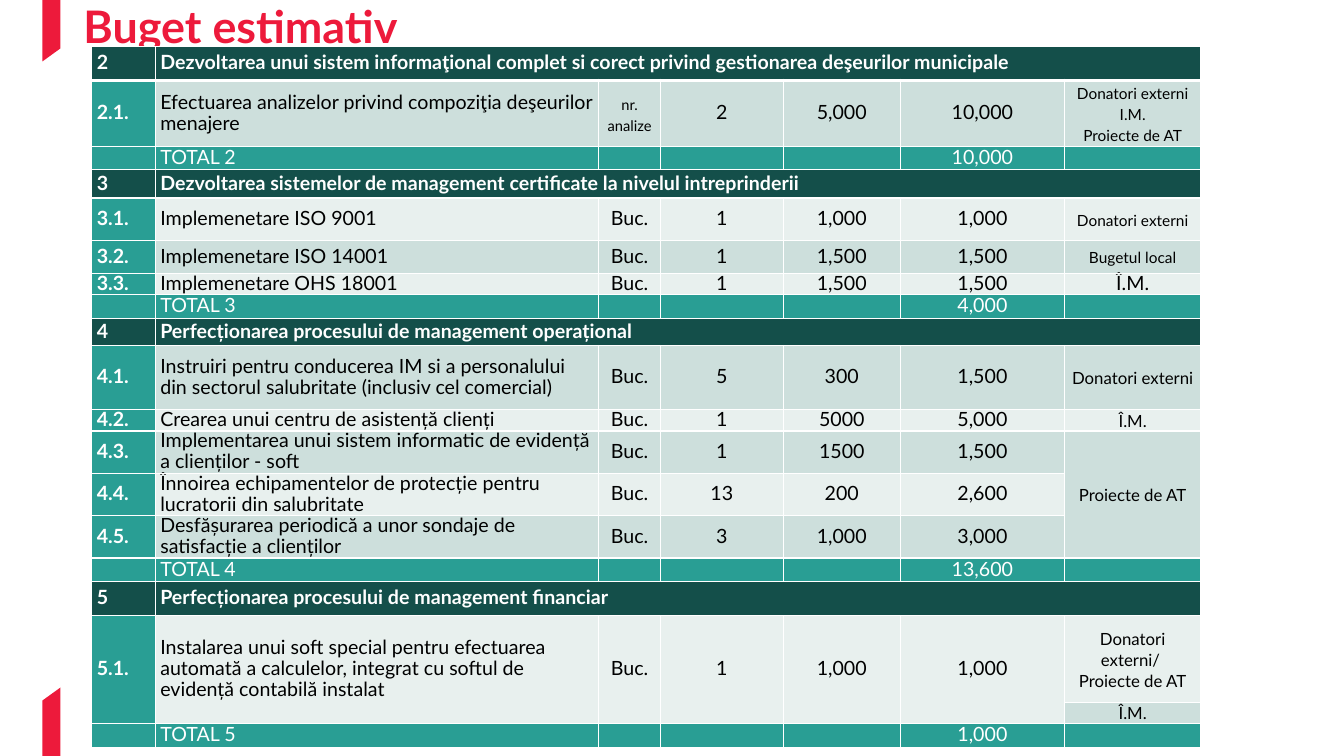
from lxml.etree import SubElement
from pptx import Presentation
from pptx.dml.color import RGBColor
from pptx.enum.text import MSO_ANCHOR as Anchor, PP_ALIGN as Align
from pptx.oxml.ns import qn
from pptx.util import Inches, Pt

FONT = "Lato"
RED, WHITE, BLACK = "ED1A3B", "FFFFFF", "000000"
DARK, TEAL, BANDS = "144F4A", "299E94", ("E8F0EE", "CDDFDC")

TITLE = "Buget estimativ"
RIBBONS = [
    [(0.42, 0), (0.6, 0), (0.6, 0.48), (0.42, 0.61)],
    [(0.42, 6.95), (0.6, 6.82), (0.6, 7.5), (0.42, 7.5)],
]
COLUMNS = [0.63, 4.4, 0.61, 1.22, 1.16, 1.63, 1.35]

# (height, "section", number, title), (height, "total", label, amount) or
# (height, "item", number, activity, unit, count, price, sum, funder, funder size)
ROWS = [
    (0.34, "section", "2", "Dezvoltarea unui sistem informaţional complet si corect privind "
                           "gestionarea deşeurilor municipale"),
    (0.65, "item", "2.1.", "Efectuarea analizelor privind compoziţia deşeurilor menajere",
     "nr. analize", "2", "5,000", "10,000", "Donatori externi\vI.M.\vProiecte de AT", 11),
    (0.23, "total", "TOTAL 2", "10,000"),
    (0.28, "section", "3", "Dezvoltarea sistemelor de management certificate la nivelul intreprinderii"),
    (0.42, "item", "3.1.", "Implemenetare ISO 9001", "Buc.", "1", "1,000", "1,000",
     "Donatori externi", 11),
    (0.33, "item", "3.2.", "Implemenetare ISO 14001", "Buc.", "1", "1,500", "1,500",
     "Bugetul local", 11),
    (0.21, "item", "3.3.", "Implemenetare OHS 18001", "Buc.", "1", "1,500", "1,500", "Î.M.", 14),
    (0.23, "total", "TOTAL 3", "4,000"),
    (0.27, "section", "4", "Perfecționarea procesului de management operațional"),
    (0.64, "item", "4.1.", "Instruiri pentru conducerea IM si a personalului din sectorul "
                           "salubritate (inclusiv cel comercial)",
     "Buc.", "5", "300", "1,500", "Donatori externi", 12),
    (0.21, "item", "4.2.", "Crearea unui centru de asistență clienți", "Buc.", "1", "5000",
     "5,000", "Î.M.", 12),
    (0.42, "item", "4.3.", "Implementarea unui sistem informatic de evidență a clienților - soft",
     "Buc.", "1", "1500", "1,500", "Proiecte de AT", 12),
    (0.42, "item", "4.4.", "Înnoirea echipamentelor de protecție pentru lucratorii din salubritate",
     "Buc.", "13", "200", "2,600", "", 12),
    (0.42, "item", "4.5.", "Desfășurarea periodică a unor sondaje de satisfacție a clienților",
     "Buc.", "3", "1,000", "3,000", "", 12),
    (0.23, "total", "TOTAL 4", "13,600"),
    (0.34, "section", "5", "Perfecționarea procesului de management financiar"),
    (0.86, "item", "5.1.", "Instalarea unui soft special pentru efectuarea automată a calculelor, "
                           "integrat cu softul de evidență contabilă instalat",
     "Buc.", "1", "1,000", "1,000", "Donatori externi/ \vProiecte de AT", 12),
    (0.21, "item", "", "", "", "", "", "", "Î.M.", 12),
    (0.23, "total", "TOTAL 5", "1,000"),
]
# (first row, first column, last row, last column)
MERGES = [(row, 1, row, 6) for row, entry in enumerate(ROWS) if entry[1] == "section"]
MERGES += [(11, 6, 13, 6)] + [(16, column, 17, column) for column in range(6)]


def rgb(code):
    return RGBColor.from_string(code)


def write(frame, text, size=14, color=BLACK, bold=False, align=Align.LEFT, spacing=Pt(15)):
    para = frame.paragraphs[0]
    para.text = text
    para.alignment = align
    para.line_spacing = spacing
    for span in para.runs:
        span.font.name = FONT
        span.font.size = Pt(size)
        span.font.bold = bold
        span.font.color.rgb = rgb(color)
    if not text:
        para.font.size = Pt(size)


def add_border(cell, side, width):
    line = SubElement(cell._tc.get_or_add_tcPr(), qn(f"a:ln{side}"), w=str(Pt(width)))
    SubElement(SubElement(line, qn("a:solidFill")), qn("a:srgbClr"), val=WHITE)


def add_ribbon(page, points):
    corners = [(Inches(x), Inches(y)) for x, y in points]
    builder = page.shapes.build_freeform(*corners[0])
    builder.add_line_segments(corners[1:], close=True)
    ribbon = builder.convert_to_shape()
    ribbon.shadow.inherit = False
    ribbon.fill.solid()
    ribbon.fill.fore_color.rgb = rgb(RED)
    ribbon.line.fill.background()


def row_texts(kind, values):
    """Return the seven cell texts of a row."""
    if kind == "section":
        return [*values] + [""] * 5
    if kind == "total":
        label, amount = values
        return ["", label, "", "", "", amount, ""]
    return values[:7]


def cell_style(kind, row, column, values):
    """Return the fill and the text format of a cell."""
    align = Align.LEFT if column < 2 else Align.CENTER
    if kind == "section":
        return DARK, dict(color=WHITE, bold=True, align=align)
    if kind == "total" or column == 0:
        return TEAL, dict(color=WHITE, bold=column == 0, align=align)
    size = 14
    if column == 6:
        size = values[7]
    elif column == 2 and values[2] != "Buc.":
        size = 10.5
    return BANDS[row % 2], dict(size=size, align=align)


def add_budget(page):
    height = sum(entry[0] for entry in ROWS)
    table = page.shapes.add_table(len(ROWS), len(COLUMNS), Inches(0.91), Inches(0.46),
                                  Inches(sum(COLUMNS)), Inches(height)).table
    table.first_row = table.horz_banding = False
    for column, width in enumerate(COLUMNS):
        table.columns[column].width = Inches(width)
    for row, (height, kind, *values) in enumerate(ROWS):
        table.rows[row].height = Inches(height)
        for column, text in enumerate(row_texts(kind, values)):
            cell = table.cell(row, column)
            fill, style = cell_style(kind, row, column, values)
            cell.margin_left = cell.margin_right = Inches(0.05)
            cell.margin_top = cell.margin_bottom = 0
            cell.vertical_anchor = Anchor.MIDDLE
            for side in "LRTB":
                under_header = (row, side) in ((0, "B"), (1, "T"))
                add_border(cell, side, 3 if under_header else 1)
            cell.fill.solid()
            cell.fill.fore_color.rgb = rgb(fill)
            write(cell.text_frame, text, **style)
    for top, left, bottom, right in MERGES:
        table.cell(top, left).merge(table.cell(bottom, right))


def main():
    deck = Presentation()
    deck.slide_width, deck.slide_height = Inches(13.33), Inches(7.5)
    page = deck.slides.add_slide(deck.slide_layouts[6])
    for points in RIBBONS:
        add_ribbon(page, points)
    box = page.shapes.add_textbox(Inches(0.73), Inches(-0.12), Inches(12.6), Inches(0.73))
    box.text_frame.word_wrap = True
    box.text_frame.vertical_anchor = Anchor.MIDDLE
    write(box.text_frame, TITLE, size=32, color=RED, bold=True, spacing=1.05)
    add_budget(page)
    deck.save("out.pptx")


if __name__ == "__main__":
    main()
